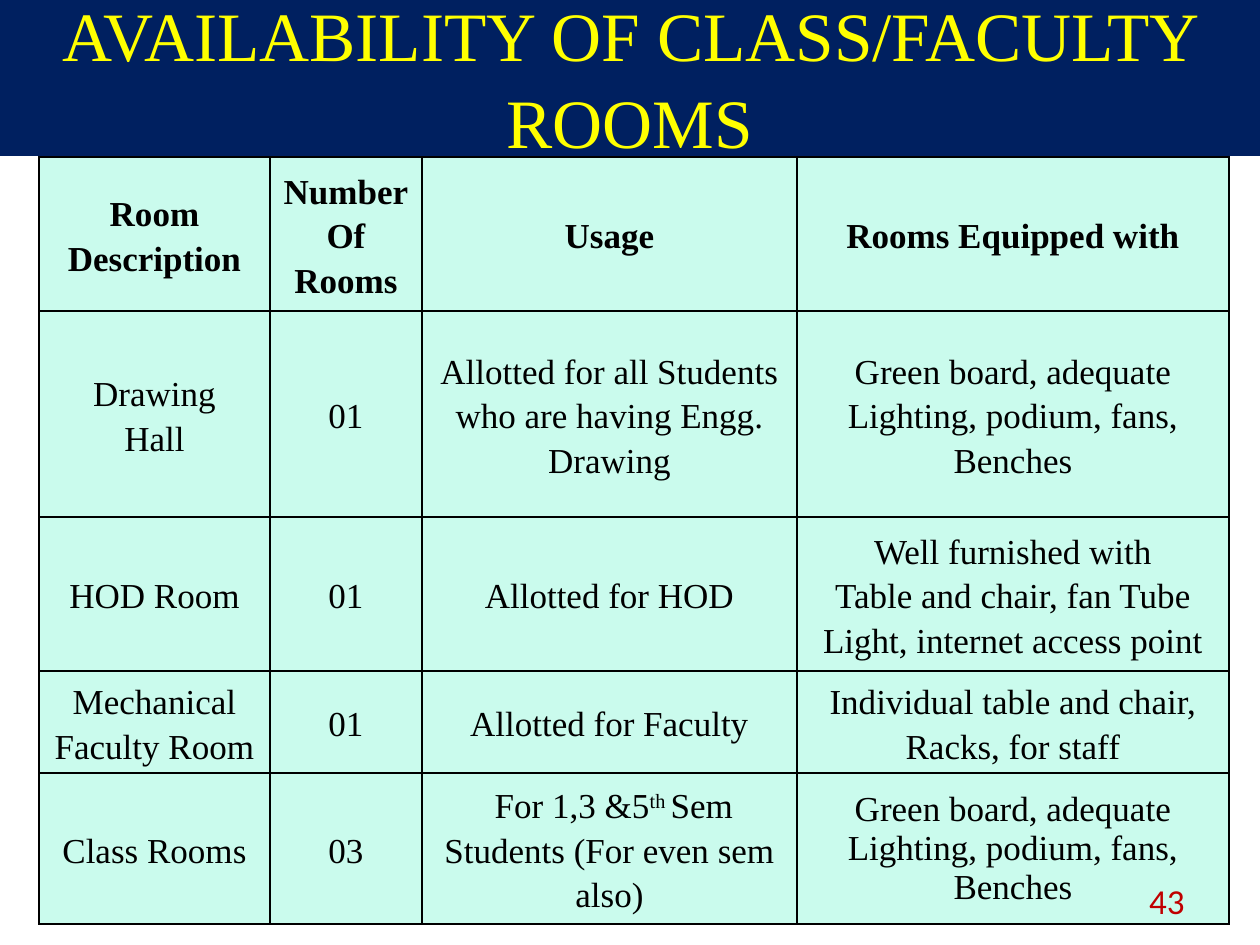
from pptx import Presentation
from pptx.dml.color import RGBColor
from pptx.enum.shapes import MSO_SHAPE
from pptx.enum.text import MSO_ANCHOR, PP_ALIGN
from pptx.oxml import parse_xml
from pptx.oxml.ns import nsdecls
from pptx.util import Emu, Pt

RECTANGLE = MSO_SHAPE.RECTANGLE
MIDDLE = MSO_ANCHOR.MIDDLE
CENTER, RIGHT = PP_ALIGN.CENTER, PP_ALIGN.RIGHT
PX_PER_INCH = 126

TITLE = "AVAILABILITY OF CLASS/FACULTY ROOMS"
PAGE_NUMBER = "43"
COLUMN_WIDTHS = [231, 152, 375, 432]
ROW_HEIGHTS = [154, 206, 154, 102, 151]
GREEN_BOARD_ROOM = ["Green board, adequate", "Lighting, podium, fans,", "Benches"]
ROOMS = [
    [["Room", "Description"], ["Number", "Of Rooms"], ["Usage"], ["Rooms Equipped with"]],
    [["Drawing", "Hall"], ["01"],
     ["Allotted for all Students who are having Engg. Drawing"], GREEN_BOARD_ROOM],
    [["HOD Room"], ["01"], ["Allotted for HOD"],
     ["Well furnished with", "Table and chair, fan Tube", "Light, internet access point"]],
    [["Mechanical Faculty Room"], ["01"], ["Allotted for Faculty"],
     ["Individual table and chair,", "Racks, for staff"]],
    [["Class Rooms"], ["03"],
     [" For 1,3 &5^th ^Sem Students (For even sem also)"], GREEN_BOARD_ROOM],
]


def px(length):
    return Emu(round(length * 914400 / PX_PER_INCH))


def color(hex_code):
    return RGBColor.from_string(hex_code)


class RoomSlide:
    """Draws the elements of one slide in a shared style."""

    NAVY, YELLOW, MINT, BLACK, RED = "002060", "FFFF00", "CAFBED", "000000", "C00000"
    SERIF, SANS = "Times New Roman", "Calibri"

    def __init__(self, deck):
        self.slide = deck.slides.add_slide(deck.slide_layouts[6])

    def add_lines(self, frame, lines, ink, font=SERIF, size=20, bold=False,
                  align=CENTER, spacing=None):
        for index, line in enumerate(lines):
            paragraph = frame.paragraphs[0] if index == 0 else frame.add_paragraph()
            paragraph.alignment = align
            paragraph.line_spacing = spacing
            for part, words in enumerate(line.split("^")):
                run = paragraph.add_run()
                run.text = words
                style = {"name": font, "size": Pt(size), "bold": bold}
                for attribute, value in style.items():
                    setattr(run.font, attribute, value)
                run.font.color.rgb = color(ink)
                if part % 2:
                    run.font._element.set("baseline", "30000")

    def banner(self, text, left, top, width, height):
        band = self.slide.shapes.add_shape(
            RECTANGLE, px(left), px(top), px(width), px(height))
        band.shadow.inherit = False
        band.fill.solid()
        band.fill.fore_color.rgb = color(self.NAVY)
        band.line.color.rgb = color(self.NAVY)
        band.line.width = Pt(0.75)
        band.text_frame.word_wrap = True
        band.text_frame.vertical_anchor = MIDDLE
        self.add_lines(band.text_frame, [text], self.YELLOW, size=39.6, spacing=1.05)

    def label(self, text, left, top, width, height):
        frame = self.slide.shapes.add_textbox(
            px(left), px(top), px(width), px(height)).text_frame
        frame.word_wrap = True
        frame.vertical_anchor = MIDDLE
        self.add_lines(frame, [text], self.RED, font=self.SANS, align=RIGHT)

    def border(self, cell):
        properties = cell._tc.get_or_add_tcPr()
        for position, side in enumerate(("lnL", "lnR", "lnT", "lnB")):
            properties.insert(position, parse_xml(
                f'<a:{side} {nsdecls("a")} w="12700"><a:solidFill>'
                f'<a:srgbClr val="{self.BLACK}"/></a:solidFill></a:{side}>'))

    def table(self, rows, left, top, widths, heights):
        grid = self.slide.shapes.add_table(
            len(heights), len(widths), px(left), px(top),
            px(sum(widths)), px(sum(heights))).table
        for column, width in zip(grid.columns, widths):
            column.width = px(width)
        for row, height in zip(grid.rows, heights):
            row.height = px(height)
        cell_format = {"margin_left": px(9), "margin_right": px(9), "margin_top": 0,
                       "margin_bottom": 0, "vertical_anchor": MIDDLE}
        last_cell = (len(heights) - 1, len(widths) - 1)
        for r, row in enumerate(rows):
            for c, lines in enumerate(row):
                cell = grid.cell(r, c)
                for attribute, value in cell_format.items():
                    setattr(cell, attribute, value)
                cell.fill.solid()
                cell.fill.fore_color.rgb = color(self.MINT)
                self.border(cell)
                self.add_lines(cell.text_frame, lines, self.BLACK, bold=r == 0,
                               spacing=None if (r, c) == last_cell else 1.15)


def main():
    deck = Presentation()
    deck.slide_width, deck.slide_height = px(1260), px(945)
    page = RoomSlide(deck)
    page.banner(TITLE, 0, -4, 1260, 159)
    page.table(ROOMS, 39, 157, COLUMN_WIDTHS, ROW_HEIGHTS)
    page.label(PAGE_NUMBER, 903, 876, 294, 50)
    deck.save("out.pptx")


if __name__ == "__main__":
    main()
